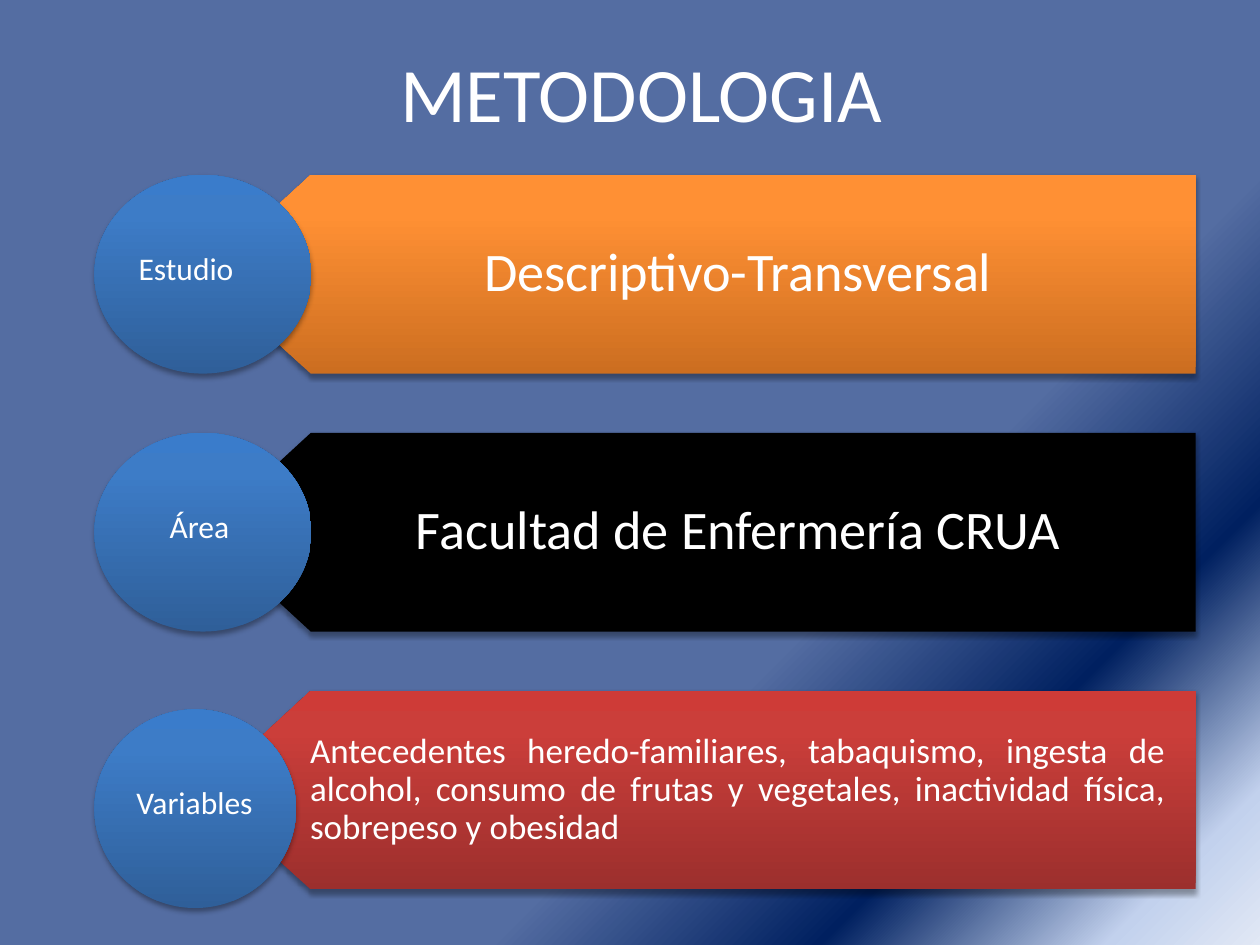
from lxml.etree import SubElement
from pptx import Presentation
from pptx.dml.color import RGBColor
from pptx.enum.shapes import MSO_SHAPE
from pptx.enum.text import MSO_ANCHOR, PP_ALIGN
from pptx.oxml.ns import qn
from pptx.util import Pt

COLORS = {
    "white": "FFFFFF",
    "black": "000000",
    "back": [(65, "546DA2"), (80, "002060"), (93, "C2D1ED"), (100, "E1E8F5")],
    "blue": [(0, "2F5F99"), (80, "3D7CC7"), (100, "3A7CCB")],
    "orange": [(0, "CC6E20"), (80, "FF9034"), (100, "FF9136")],
    "red": [(0, "9C2F2D"), (80, "CB3E3A"), (100, "CE3B37")],
}


def paint(fill, node, color, angle=90):
    """Fill with a plain colour or a list of stops; node is the XML that holds the fill."""
    shade = COLORS[color]
    if isinstance(shade, str):
        fill.solid()
        fill.fore_color.rgb = RGBColor.from_string(shade)
        return
    fill.gradient()
    fill.gradient_angle = angle
    stops = next(node.iter(qn("a:gsLst")))
    stops.clear()
    for place, value in shade:
        stop = SubElement(stops, qn("a:gs"), pos=str(place * 1000))
        SubElement(stop, qn("a:srgbClr"), val=value)


def write(frame, text, size, align=PP_ALIGN.CENTER, anchor=MSO_ANCHOR.MIDDLE,
          inset=(7.2, 3.6, 7.2, 3.6), space=1.0):
    """Set the text of a frame; inset runs left, top, right, bottom."""
    frame.word_wrap = True
    frame.vertical_anchor = anchor
    (frame.margin_left, frame.margin_top,
     frame.margin_right, frame.margin_bottom) = map(Pt, inset)
    para = frame.paragraphs[0]
    para.alignment = align
    para.line_spacing = space
    run = para.add_run()
    run.text = text
    run.font.size = Pt(size)
    run.font.name = "Calibri"
    run.font.color.rgb = RGBColor.from_string(COLORS["white"])


deck = Presentation()
deck.slide_width, deck.slide_height = Pt(720), Pt(540)
slide = deck.slides.add_slide(deck.slide_layouts[5])
paint(slide.background.fill, slide.element, "back", angle=315)

title = slide.shapes.title
title.left, title.top, title.width, title.height = map(Pt, (39.6, 7.2, 653.8, 90))
write(title.text_frame, "METODOLOGIA", 44)

# label, label alignment, disc width, disc drop, text, size, alignment, colour
rows = [
    ("Estudio", PP_ALIGN.LEFT, 124, 0,
     "Descriptivo-Transversal", 31, PP_ALIGN.CENTER, "orange"),
    ("Área ", PP_ALIGN.CENTER, 124, 0,
     "Facultad de Enfermería CRUA", 31, PP_ALIGN.CENTER, "black"),
    ("Variables", PP_ALIGN.LEFT, 115.2, 10.6,
     "Antecedentes heredo-familiares, tabaquismo, ingesta de alcohol, "
     "consumo de frutas y vegetales, inactividad física, sobrepeso y obesidad",
     20, PP_ALIGN.JUSTIFY, "red"),
]
TOP, STEP, HIGH = 100, 147.4, 113.5
TIP, NECK, END = 116, 177.6, 683.2
group = slide.shapes.add_group_shape()

for i, (label, side, wide, drop, text, size, align, color) in enumerate(rows):
    top = TOP + i * STEP
    low = top + HIGH
    path = group.shapes.build_freeform(Pt(END), Pt(low))
    path.add_line_segments([(Pt(x), Pt(y)) for x, y in (
        (NECK, low), (TIP, top + HIGH / 2), (NECK, top), (END, top))])
    arrow = path.convert_to_shape()
    write(arrow.text_frame, text, size, align,
          inset=(61.2, 9.4, 17.3, 9.4), space=0.9)

    disc = group.shapes.add_shape(
        MSO_SHAPE.OVAL, Pt(54), Pt(top + drop), Pt(wide), Pt(HIGH))
    write(disc.text_frame, label, 18, side, MSO_ANCHOR.TOP,
          inset=(7.2, 25.6, 7.2, 3.6))

    for shape, tone in ((arrow, color), (disc, "blue")):
        paint(shape.fill, shape.element, tone)
        shape.line.fill.background()
        shape.shadow.inherit = False
        effects = next(shape.element.iter(qn("a:effectLst")))
        shadow = SubElement(effects, qn("a:outerShdw"), blurRad=str(Pt(3.1)),
                            dist=str(Pt(1.8)), dir="5400000", rotWithShape="0")
        dark = SubElement(shadow, qn("a:srgbClr"), val=COLORS["black"])
        SubElement(dark, qn("a:alpha"), val="35000")

deck.save("out.pptx")
